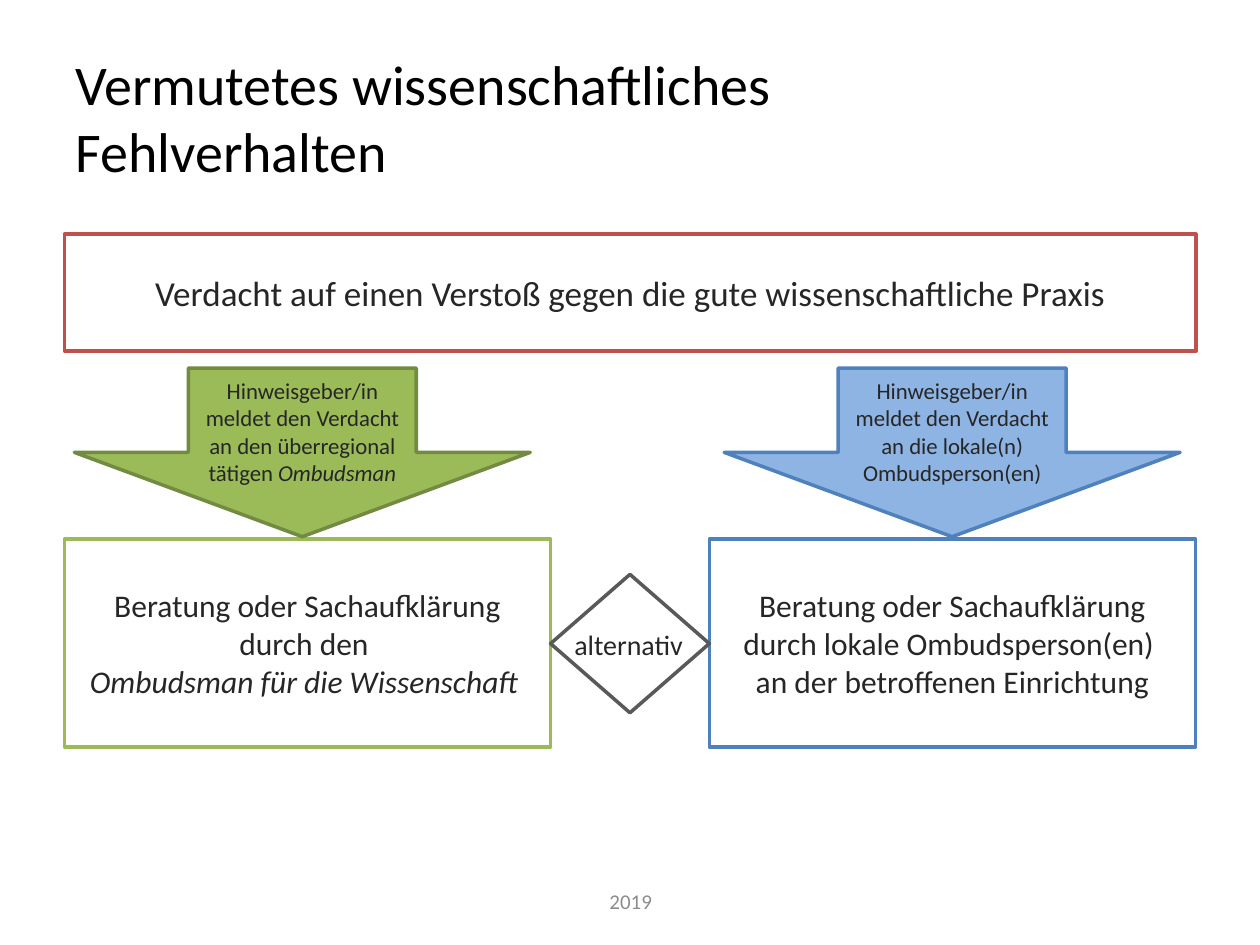
import pptx
import pptx.dml.color
import pptx.enum.shapes
import pptx.enum.text
import pptx.util

Cm = pptx.util.Cm
Pt = pptx.util.Pt
Kind = pptx.enum.shapes.MSO_SHAPE
Align = pptx.enum.text.PP_ALIGN
Anchor = pptx.enum.text.MSO_ANCHOR


def colour(value):
    return pptx.dml.color.RGBColor.from_string(value)


class SlideBuilder:
    font = "Calibri"
    ink = "262626"
    line_width = Pt(2)

    def __init__(self, slide):
        self.slide = slide

    def fill_text(self, shape, paragraphs, size, ink, align, anchor, wrap=True):
        frame = shape.text_frame
        frame.word_wrap = wrap
        frame.vertical_anchor = anchor
        for index, runs in enumerate(paragraphs):
            paragraph = frame.add_paragraph() if index else frame.paragraphs[0]
            paragraph.alignment = align
            paragraph.font.name = self.font
            paragraph.font.size = Pt(size)
            paragraph.font.color.rgb = colour(ink)
            for text, italic in runs:
                run = paragraph.add_run()
                run.text = text
                if italic:
                    run.font.italic = True

    def text(self, box, text, size, ink=ink, align=Align.LEFT,
             anchor=Anchor.MIDDLE, wrap=True):
        shape = self.slide.shapes.add_textbox(*map(Cm, box))
        self.fill_text(shape, [[(text, False)]], size, ink, align, anchor, wrap)

    def shape(self, kind, box, line, paragraphs=(), size=18, fill=None):
        shape = self.slide.shapes.add_shape(kind, *map(Cm, box))
        shape.shadow.inherit = False
        shape.line.color.rgb = colour(line)
        shape.line.width = self.line_width
        if fill:
            shape.fill.solid()
            shape.fill.fore_color.rgb = colour(fill)
        else:
            shape.fill.background()
        self.fill_text(shape, paragraphs, size, self.ink, Align.CENTER, Anchor.MIDDLE)


def main():
    presentation = pptx.Presentation()
    presentation.slide_width = Cm(25.4)
    presentation.slide_height = Cm(19.05)
    builder = SlideBuilder(presentation.slides.add_slide(presentation.slide_layouts[6]))

    builder.text((1.27, 0.76, 16.94, 3.18),
                 "Vermutetes wissenschaftliches Fehlverhalten", 32, "000000")
    builder.shape(
        Kind.RECTANGLE, (1.3, 4.72, 22.81, 2.36), "C0504D",
        [[("Verdacht auf einen Verstoß gegen die gute wissenschaftliche Praxis", False)]],
        20)

    branches = [
        (1.3, 1.5, "9BBB59", "9BBB59", "738A42",
         [[("Hinweisgeber/in meldet den Verdacht an den überregional tätigen ", False),
           ("Ombudsman", True)]],
         [[("Beratung oder Sachaufklärung durch den ", False)],
          [("Ombudsman für die Wissenschaft ", True)]]),
        (14.3, 14.6, "4F81BD", "8EB4E3", "4F81BD",
         [[("Hinweisgeber/in meldet den Verdacht an die lokale(n) Ombudsperson(en)", False)]],
         [[("Beratung oder Sachaufklärung durch lokale Ombudsperson(en) ", False)],
          [("an der betroffenen Einrichtung", False)]]),
    ]
    for box_left, arrow_left, box_line, arrow_fill, arrow_line, report, advice in branches:
        builder.shape(Kind.RECTANGLE, (box_left, 10.87, 9.8, 4.19), box_line, advice)
        builder.shape(Kind.DOWN_ARROW, (arrow_left, 7.42, 9.19, 3.4), arrow_line,
                      report, 13, arrow_fill)

    builder.shape(Kind.DIAMOND, (11.1, 11.58, 3.2, 2.79), "595959")
    builder.text((11.33, 12.52, 2.72, 0.94), "alternativ", 16,
                 anchor=Anchor.TOP, wrap=False)
    builder.text((8.69, 17.65, 8.05, 1.02), "2019", 12, "8C8C8C", Align.CENTER)

    presentation.save("out.pptx")


if __name__ == "__main__":
    main()
